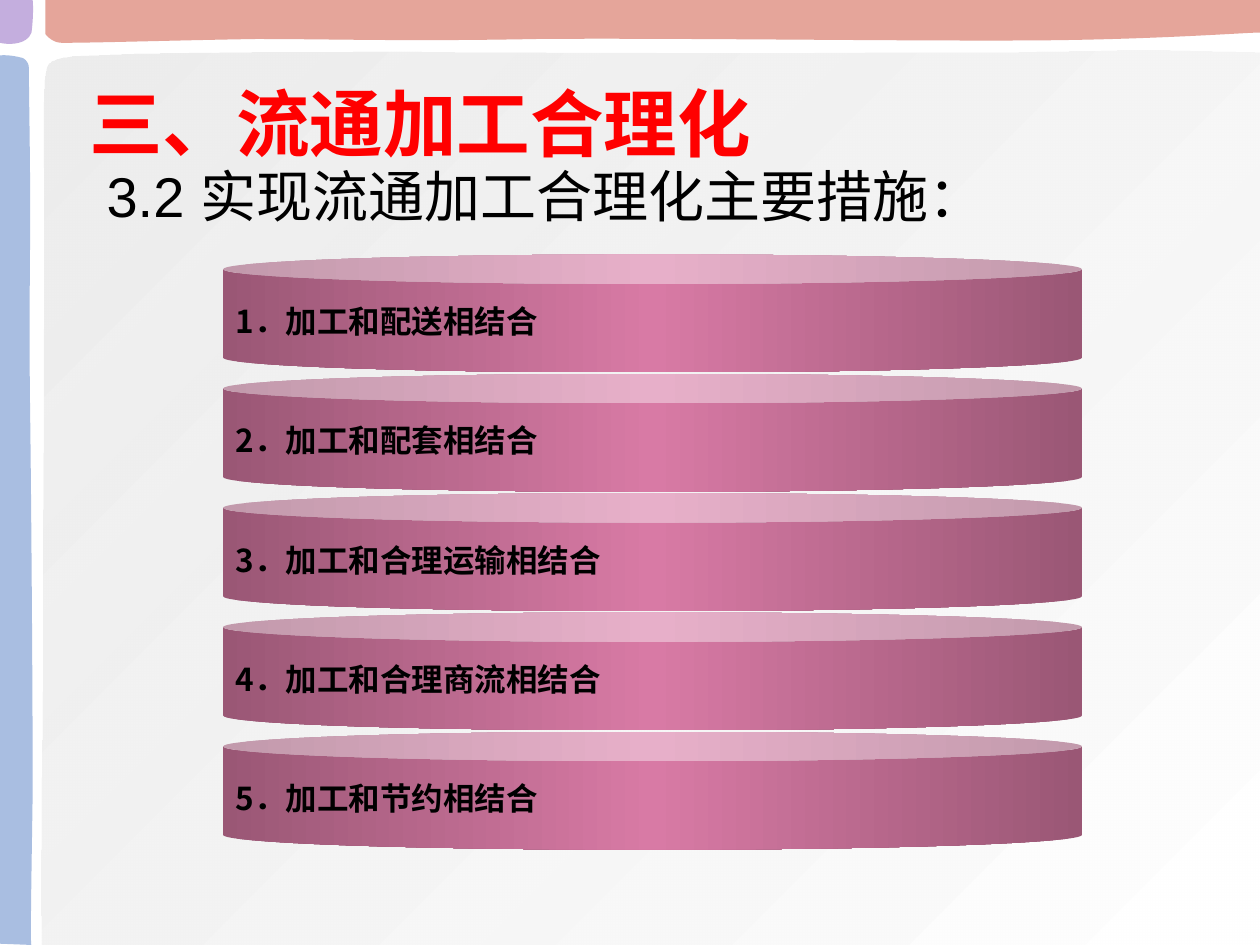
"""Build the slide on measures that make distribution processing rational."""
from dataclasses import dataclass

from lxml import etree
from pptx import Presentation
from pptx.dml.color import RGBColor
from pptx.enum.shapes import MSO_SHAPE
from pptx.enum.text import MSO_ANCHOR, PP_ALIGN
from pptx.oxml.ns import qn
from pptx.util import Cm, Pt

CAN = MSO_SHAPE.CAN
LEFT = PP_ALIGN.LEFT
MIDDLE, TOP = MSO_ANCHOR.MIDDLE, MSO_ANCHOR.TOP
COLORS = {
    "panel_start": "E6E6E6", "panel_end": "FFFFFF", "coral": "DA7F70",
    "blue": "85A3D5", "violet": "AC8CD0", "can": "D87AA5",
    "title": "FF0000", "text": "000000",
}
LATIN, CHINESE = "Arial", "Noto Sans CJK SC"
UNIT = Cm(2.54) / 100
CAN_LEFT, CAN_WIDTH, CAN_HEIGHT = 4.5, 17.31, 2.38
FIRST_TOP, LAST_TOP = 5.13, 14.75
MEASURES = ("加工和配送相结合", "加工和配套相结合", "加工和合理运输相结合",
            "加工和合理商流相结合", "加工和节约相结合")
CAN_PITCH = (LAST_TOP - FIRST_TOP) / (len(MEASURES) - 1)


@dataclass
class Stop:
    """A gradient stop, with position, opacity and shade in percent."""
    position: int
    color: str
    opacity: int = 100
    shade: int = 100


@dataclass
class Region:
    """A background outline: lines hold one point, curves hold three."""
    start: tuple
    segments: list
    stops: list
    angle: int = 0


@dataclass
class Label:
    """A line of text in a box, measured in centimetres."""
    text: str
    box: tuple
    size: int
    color: str
    bold: bool
    anchor: MSO_ANCHOR
    wrap: bool


REGIONS = [
    Region((1000, 750), [
        (1000, 42), (886, 38, 855, 42, 760, 42), (666, 42, 550, 43, 433, 42),
        (316, 41, 123, 41, 57, 45), (36, 48, 36, 49, 35, 73),
        (34, 96, 35, 110, 35, 182), (35, 256, 34, 412, 34, 506),
        (34, 601, 32, 662, 33, 750), (517, 750, 1000, 750, 1000, 750)],
        [Stop(0, "panel_start", 70), Stop(100, "panel_end")], 45),
    Region((1000, 0), [
        (1000, 26), (1001, 25, 928, 31, 832, 32), (736, 33, 531, 30, 426, 31),
        (321, 33, 265, 31, 203, 31), (140, 32, 77, 34, 49, 34),
        (41, 34, 36, 27, 36, 27), (36, 27, 36, 14, 36, 0), (1000, 0)],
        [Stop(0, "coral", 70)]),
    Region((0, 749), [
        (25, 750), (24, 751, 25, 698, 26, 628), (26, 558, 25, 407, 24, 330),
        (23, 254, 24, 212, 24, 167), (24, 121, 23, 75, 23, 54),
        (23, 48, 18, 46, 18, 46), (7, 43, 0, 44, 0, 44), (0, 749)],
        [Stop(0, "blue", 70)]),
    Region((0, 0), [
        (26, 0), (27, 12, 25, 26, 25, 26), (23, 31, 19, 33, 15, 34),
        (7, 36, 0, 34, 0, 34), (0, 0)],
        [Stop(0, "violet", 70)]),
]
CAN_STOPS = [Stop(0, "can", shade=46), Stop(50, "can"), Stop(100, "can", shade=46)]
LABELS = [
    Label("三、流通加工合理化", (1.55, 1.16, 18.69, 2.62), 42, "title", True, MIDDLE, True),
    Label("3.2 实现流通加工合理化主要措施：", (1.9, 3.13, 18.19, 1.63), 32, "text", False, TOP, False),
]


def add_color(parent, stop: Stop) -> None:
    """Append the colour of a stop, with its shade and opacity, to an XML parent."""
    color = etree.SubElement(parent, qn("a:srgbClr"), val=COLORS[stop.color])
    for tag, percent in (("a:shade", stop.shade), ("a:alpha", stop.opacity)):
        if percent < 100:
            etree.SubElement(color, qn(tag), val=str(percent * 1000))


def paint(shape, stops: list, angle: int = 0) -> None:
    """Fill a shape with one colour or a linear gradient, without line or shadow."""
    shape.shadow.inherit = False
    shape.line.fill.background()
    shape.fill.background()
    old_fill = shape._element.spPr.find(qn("a:noFill"))
    if len(stops) == 1:
        new_fill = etree.Element(qn("a:solidFill"))
        add_color(new_fill, stops[0])
    else:
        new_fill = etree.Element(qn("a:gradFill"), rotWithShape="1")
        stop_list = etree.SubElement(new_fill, qn("a:gsLst"))
        for stop in stops:
            add_color(etree.SubElement(stop_list, qn("a:gs"), pos=str(stop.position * 1000)), stop)
        etree.SubElement(new_fill, qn("a:lin"), ang=str(angle * 60000), scaled="0")
    shape._element.spPr.replace(old_fill, new_fill)


def bend(shape, segments: list) -> None:
    """Turn each three-point run of a polyline into one cubic Bézier curve."""
    lines = iter(list(shape._element.iter(qn("a:lnTo"))))
    for segment in segments:
        run = [next(lines) for _ in range(len(segment) // 2)]
        if len(run) == 3:
            curve = etree.Element(qn("a:cubicBezTo"))
            run[0].addprevious(curve)
            for line in run:
                curve.append(line[0])
                line.getparent().remove(line)


def add_region(page, region: Region) -> None:
    """Draw one background region."""
    points = [pair for segment in region.segments for pair in zip(segment[::2], segment[1::2])]
    builder = page.shapes.build_freeform(*region.start, scale=UNIT)
    builder.add_line_segments(points, close=True)
    shape = builder.convert_to_shape()
    bend(shape, region.segments)
    paint(shape, region.stops, region.angle)


def write(shape, label: Label, font_name: str) -> None:
    """Put the text of a label into a shape."""
    frame = shape.text_frame
    frame.word_wrap = label.wrap
    frame.vertical_anchor = label.anchor
    para = frame.paragraphs[0]
    para.text = label.text
    para.alignment = LEFT
    font = para.font
    font.name, font.size, font.bold = font_name, Pt(label.size), label.bold
    font.color.rgb = RGBColor.from_string(COLORS[label.color])


def add_can(page, index: int, measure: str) -> None:
    """Draw one numbered measure as a can in the stack."""
    box = (CAN_LEFT, FIRST_TOP + index * CAN_PITCH, CAN_WIDTH, CAN_HEIGHT)
    can = page.shapes.add_shape(CAN, *map(Cm, box))
    can.adjustments[0] = 0.25
    paint(can, CAN_STOPS)
    write(can, Label(f"{index + 1}．{measure}", box, 18, "text", True, MIDDLE, False), CHINESE)


def main() -> None:
    """Build and save the deck."""
    deck = Presentation()
    deck.slide_width, deck.slide_height = Cm(25.4), Cm(19.05)
    page = deck.slides.add_slide(deck.slide_layouts[6])
    for region in REGIONS:
        add_region(page, region)
    for index, measure in enumerate(MEASURES):
        add_can(page, index, measure)
    for label in LABELS:
        write(page.shapes.add_textbox(*map(Cm, label.box)), label, LATIN)
    deck.save("out.pptx")


if __name__ == "__main__":
    main()
